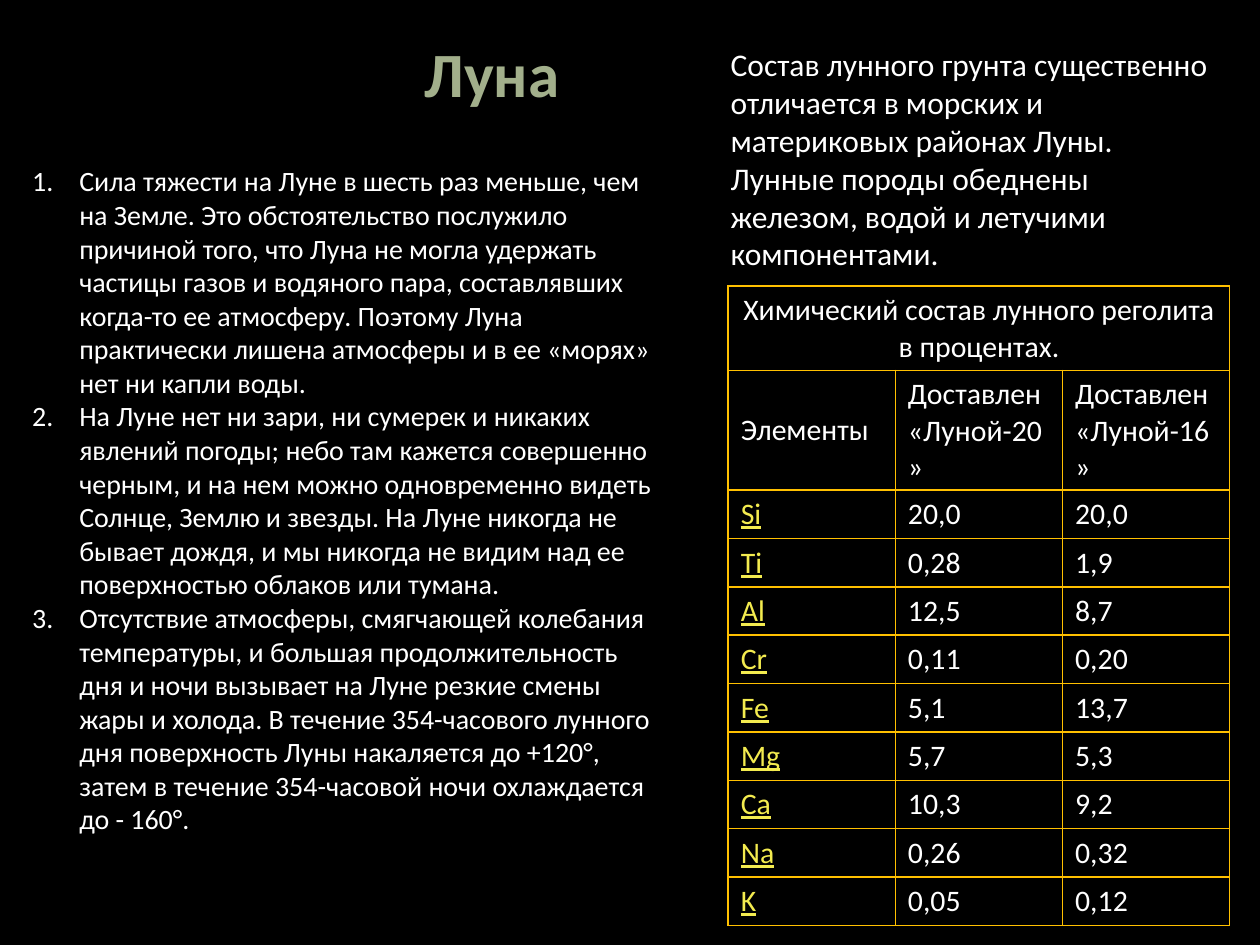
from pptx import Presentation
from pptx.dml.color import RGBColor as RGB
from pptx.enum.text import MSO_ANCHOR as Anchor, PP_ALIGN as Align
from pptx.oxml import parse_xml
from pptx.oxml.ns import nsdecls
from pptx.util import Cm, Pt

COLORS = {"back": "000000", "text": "FFFFFF", "title": "A2AF8B",
          "link": "F3EB4F", "line": "FFC000"}


def style(par, size, color="text"):
    font = par.font
    font.name, font.size = "Calibri", Pt(size)
    font.color.rgb = RGB.from_string(COLORS[color])
    return font


def add_box(left, top, width, height, texts, size, color="text"):
    box = slide.shapes.add_textbox(Cm(left), Cm(top), Cm(width), Cm(height))
    frame = box.text_frame
    frame.word_wrap = True
    frame.text = "\n".join(texts)
    return frame.paragraphs, size, color


prs = Presentation()
prs.slide_width, prs.slide_height = Cm(25.4), Cm(19.05)
slide = prs.slides.add_slide(prs.slide_layouts[6])
fill = slide.background.fill
fill.solid()
fill.fore_color.rgb = RGB.from_string(COLORS["back"])

# Title
pars, size, color = add_box(2.77, 0.58, 14.3, 1.8, ["Луна"], 36, "title")
pars[0].alignment = Align.CENTER
style(pars[0], size, color).bold = True

# Numbered facts
facts = [
    "Сила тяжести на Луне в шесть раз меньше, чем на Земле. Это обстоятельство "
    "послужило причиной того, что Луна не могла удержать частицы газов и водяного "
    "пара, составлявших когда-то ее атмосферу. Поэтому Луна практически лишена "
    "атмосферы и в ее «морях» нет ни капли воды.",
    "На Луне нет ни зари, ни сумерек и никаких явлений погоды; небо там кажется "
    "совершенно черным, и на нем можно одновременно видеть Солнце, Землю и звезды. "
    "На Луне никогда не бывает дождя, и мы никогда не видим над ее поверхностью "
    "облаков или тумана.",
    "Отсутствие атмосферы, смягчающей колебания температуры, и большая "
    "продолжительность дня и ночи вызывает на Луне резкие смены жары и холода. "
    "В течение 354-часового лунного дня поверхность Луны накаляется до +120°, "
    "затем в течение 354-часовой ночи охлаждается до - 160°.",
]
pars, size, color = add_box(0.4, 3.18, 13.1, 13.94, facts, 16)
for par in pars:
    props = par._p.get_or_add_pPr()
    props.set("marL", str(Cm(0.95)))
    props.set("indent", str(-Cm(0.95)))
    props.append(parse_xml(f'<a:buFont {nsdecls("a")} typeface="+mj-lt"/>'))
    props.append(parse_xml(f'<a:buAutoNum {nsdecls("a")} type="arabicPeriod"/>'))
    style(par, size, color)

# Soil note
note = ("Состав лунного грунта существенно отличается в морских и материковых "
        "районах Луны. Лунные породы обеднены железом, водой и летучими компонентами.")
pars, size, color = add_box(14.48, 0.79, 10.31, 4.88, [note], 18)
style(pars[0], size, color)

# Soil table
rows = [
    ("Химический состав лунного реголита в процентах.", "", ""),
    ("Элементы", "Доставлен «Луной-20»", "Доставлен «Луной-16»"),
    ("Si", "20,0", "20,0"),
    ("Ti", "0,28", "1,9"),
    ("Al", "12,5", "8,7"),
    ("Cr", "0,11", "0,20"),
    ("Fe", "5,1", "13,7"),
    ("Mg", "5,7", "5,3"),
    ("Ca", "10,3", "9,2"),
    ("Na", "0,26", "0,32"),
    ("K", "0,05", "0,12"),
]
heights = [1.69, 2.4] + [0.96] * 9
table = slide.shapes.add_table(len(rows), 3, Cm(14.68), Cm(5.77),
                               Cm(10.11), Cm(sum(heights))).table
table.first_row = table.horz_banding = False
for col in table.columns:
    col.width = Cm(3.37)
for r, (row, height) in enumerate(zip(rows, heights)):
    table.rows[r].height = Cm(height)
    for c, text in enumerate(row):
        cell = table.cell(r, c)
        cell.text = text
        cell.vertical_anchor = Anchor.MIDDLE
        for side in "LRTB":
            cell._tc.get_or_add_tcPr().append(parse_xml(
                f'<a:ln{side} {nsdecls("a")} w="{Pt(1)}"><a:solidFill>'
                f'<a:srgbClr val="{COLORS["line"]}"/></a:solidFill></a:ln{side}>'))
        cell.fill.background()
        par = cell.text_frame.paragraphs[0]
        link = r > 1 and c == 0
        font = style(par, 17, "link" if link else "text")
        if link:
            font.underline = True
        if r == 0:
            par.alignment = Align.CENTER
table.cell(0, 0).merge(table.cell(0, 2))

prs.save("out.pptx")
